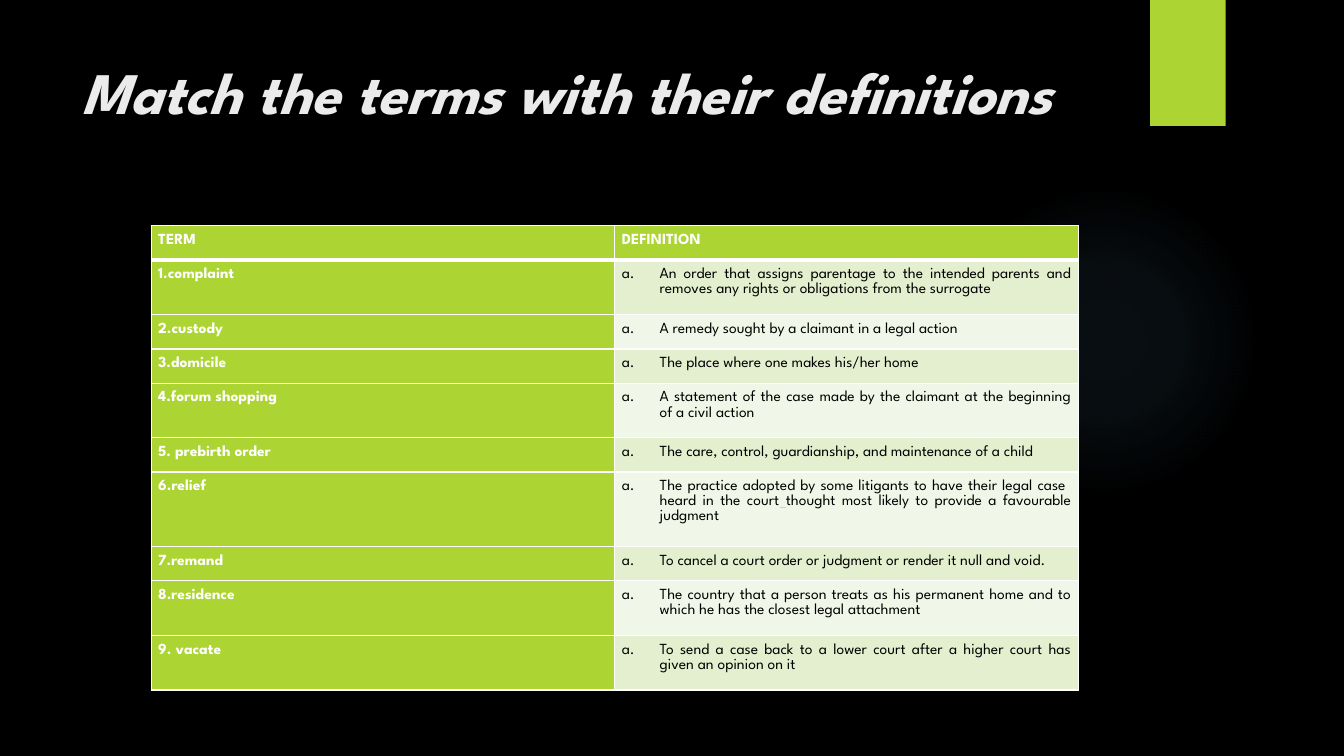
import dataclasses

import pptx
import pptx.dml.color
import pptx.enum.shapes
import pptx.enum.text
import pptx.oxml
import pptx.util

Pt = pptx.util.Pt
NAMESPACE = 'xmlns:a="http://schemas.openxmlformats.org/drawingml/2006/main"'


@dataclasses.dataclass(frozen=True)
class Theme:
    font: str = "League Spartan"
    background: str = "000000"
    title: str = "EBEBEB"
    accent: str = "ACD433"
    glow: str = "7AC4F0"
    light: str = "FFFFFF"
    dark: str = "000000"
    link: str = "C4E46E"
    bands: tuple = ("E3EFCE", "F1F7E8")
    title_size: float = 42
    table_size: float = 11


THEME = Theme()
HEADINGS = ("TERM", "DEFINITION")
HEADER_HEIGHT = 24.5
LINE_HEIGHTS = {1: 24.5, 2: 39, 3: 53.2}
ENTRIES = [
    ("1.complaint", 2, ["An order that assigns parentage to the intended parents and removes any rights or obligations from the surrogate"]),
    ("2.custody", 1, ["A remedy sought by a claimant in a legal action"]),
    ("3.domicile", 1, ["The place where one makes his/her home"]),
    ("4.forum shopping", 2, ["A statement of the case made by the claimant at the beginning of a civil action"]),
    ("5. prebirth order", 1, ["The care, control, guardianship, and maintenance of a child"]),
    ("6.relief", 3, ["The practice adopted by some litigants to have their legal case ", " ", "heard in the court", " ", "thought most likely to provide a favourable judgment"]),
    ("7.remand", 1, ["To cancel a court order or judgment or render it null and void."]),
    ("8.residence", 2, ["The country that a person treats as his permanent home and to which he has the closest legal attachment"]),
    ("9. vacate", 2, ["To send a case back to a lower court after a higher court has given an opinion on it"]),
]


def color(value):
    return pptx.dml.color.RGBColor.from_string(value)


def apply(target, values):
    for name, value in values.items():
        setattr(target, name, value)


def element(markup):
    tag, rest = markup[1:].split(">", 1)
    return pptx.oxml.parse_xml(f"<{tag} {NAMESPACE}>{rest}")


def add_run(paragraph, text, hue, size, **extra):
    run = paragraph.add_run()
    run.text = text
    apply(run.font, {"name": THEME.font, "size": Pt(size), **extra})
    run.font.color.rgb = color(hue)


def add_plain_shape(slide, kind, box):
    shape = slide.shapes.add_shape(kind, *map(Pt, box))
    shape.shadow.inherit = False
    shape.line.fill.background()
    return shape


def add_glow(slide, box):
    shape = add_plain_shape(slide, pptx.enum.shapes.MSO_SHAPE.OVAL, box)
    shape.fill.background()
    stops = "".join(
        f'<a:gs pos="{position * 1000}"><a:srgbClr val="{THEME.glow}">'
        f'<a:alpha val="{opacity * 1000}"/></a:srgbClr></a:gs>'
        for position, opacity in ((0, 7), (36, 6), (69, 0), (100, 0))
    )
    gradient = element(
        f'<a:gradFill><a:gsLst>{stops}</a:gsLst><a:path path="circle">'
        '<a:fillToRect l="50000" t="50000" r="50000" b="50000"/></a:path></a:gradFill>'
    )
    properties = shape.element.spPr
    properties.replace(properties.find(pptx.oxml.ns.qn("a:noFill")), gradient)


def add_ribbon(slide, box):
    shape = add_plain_shape(slide, pptx.enum.shapes.MSO_SHAPE.RECTANGLE, box)
    shape.fill.solid()
    shape.fill.fore_color.rgb = color(THEME.accent)
    effects = shape.element.spPr.find(pptx.oxml.ns.qn("a:effectLst"))
    effects.append(element(
        f'<a:outerShdw blurRad="{Pt(3)}" dist="{Pt(2)}" dir="5400000">'
        f'<a:srgbClr val="{THEME.dark}"><a:alpha val="45000"/></a:srgbClr></a:outerShdw>'
    ))


def add_title(slide, box, text):
    frame = slide.shapes.add_textbox(*map(Pt, box)).text_frame
    apply(frame, {"word_wrap": True, "vertical_anchor": pptx.enum.text.MSO_ANCHOR.TOP})
    add_run(frame.paragraphs[0], text, THEME.title, THEME.title_size, bold=True, italic=True)


def fill_cell(cell, texts, hue, fill, bold, top=1, bottom=1, lettered=False):
    margins = ("margin_left", "margin_right", "margin_top", "margin_bottom")
    apply(cell, dict.fromkeys(margins, Pt(5)))
    for side, width in (("L", 1), ("R", 1), ("T", top), ("B", bottom)):
        cell._tc.get_or_add_tcPr().append(element(
            f'<a:ln{side} w="{Pt(width)}"><a:solidFill>'
            f'<a:srgbClr val="{THEME.light}"/></a:solidFill></a:ln{side}>'
        ))
    cell.fill.solid()
    cell.fill.fore_color.rgb = color(fill)
    paragraph = cell.text_frame.paragraphs[0]
    if lettered:
        properties = paragraph._p.get_or_add_pPr()
        properties.set("marL", str(Pt(27)))
        properties.set("indent", str(-Pt(27)))
        properties.append(element('<a:buAutoNum><a:x/></a:buAutoNum>'))
        numbering = properties[-1]
        numbering.remove(numbering[0])
        numbering.set("type", "alphaLcPeriod")
    apply(paragraph, {
        "alignment": pptx.enum.text.PP_ALIGN.JUSTIFY,
        "line_spacing": 1.07,
        "space_after": Pt(8),
    })
    for text in texts:
        linked = not text.strip()
        add_run(paragraph, text, THEME.link if linked else hue, THEME.table_size,
                bold=bold, underline=linked)


def add_glossary(slide, box):
    left, top, width = box
    heights = [HEADER_HEIGHT] + [LINE_HEIGHTS[lines] for _, lines, _ in ENTRIES]
    table = slide.shapes.add_table(
        len(heights), len(HEADINGS), Pt(left), Pt(top), Pt(width), Pt(sum(heights))
    ).table
    for column in table.columns:
        column.width = Pt(width / len(HEADINGS))
    for row, height in zip(table.rows, heights):
        row.height = Pt(height)
    for index, heading in enumerate(HEADINGS):
        fill_cell(table.cell(0, index), [heading], THEME.light, THEME.accent, True, bottom=3)
    for index, (term, _, definition) in enumerate(ENTRIES):
        top_border = 3 if index == 0 else 1
        fill_cell(table.cell(index + 1, 0), [term], THEME.light, THEME.accent, True, top=top_border)
        fill_cell(table.cell(index + 1, 1), definition, THEME.dark, THEME.bands[index % 2],
                  False, top=top_border, lettered=True)


def main():
    presentation = pptx.Presentation()
    apply(presentation, {"slide_width": Pt(960), "slide_height": Pt(540)})
    slide = presentation.slides.add_slide(presentation.slide_layouts[6])
    slide.background.fill.solid()
    slide.background.fill.fore_color.rgb = color(THEME.background)
    add_glow(slide, (677.5, 131.8, 221.8, 221.8))
    add_ribbon(slide, (821.5, 0, 54, 90))
    add_title(slide, (51, 36, 741, 110), "Match the terms with their definitions")
    add_glossary(slide, (108, 161.3, 662.4))
    presentation.save("out.pptx")


if __name__ == "__main__":
    main()
